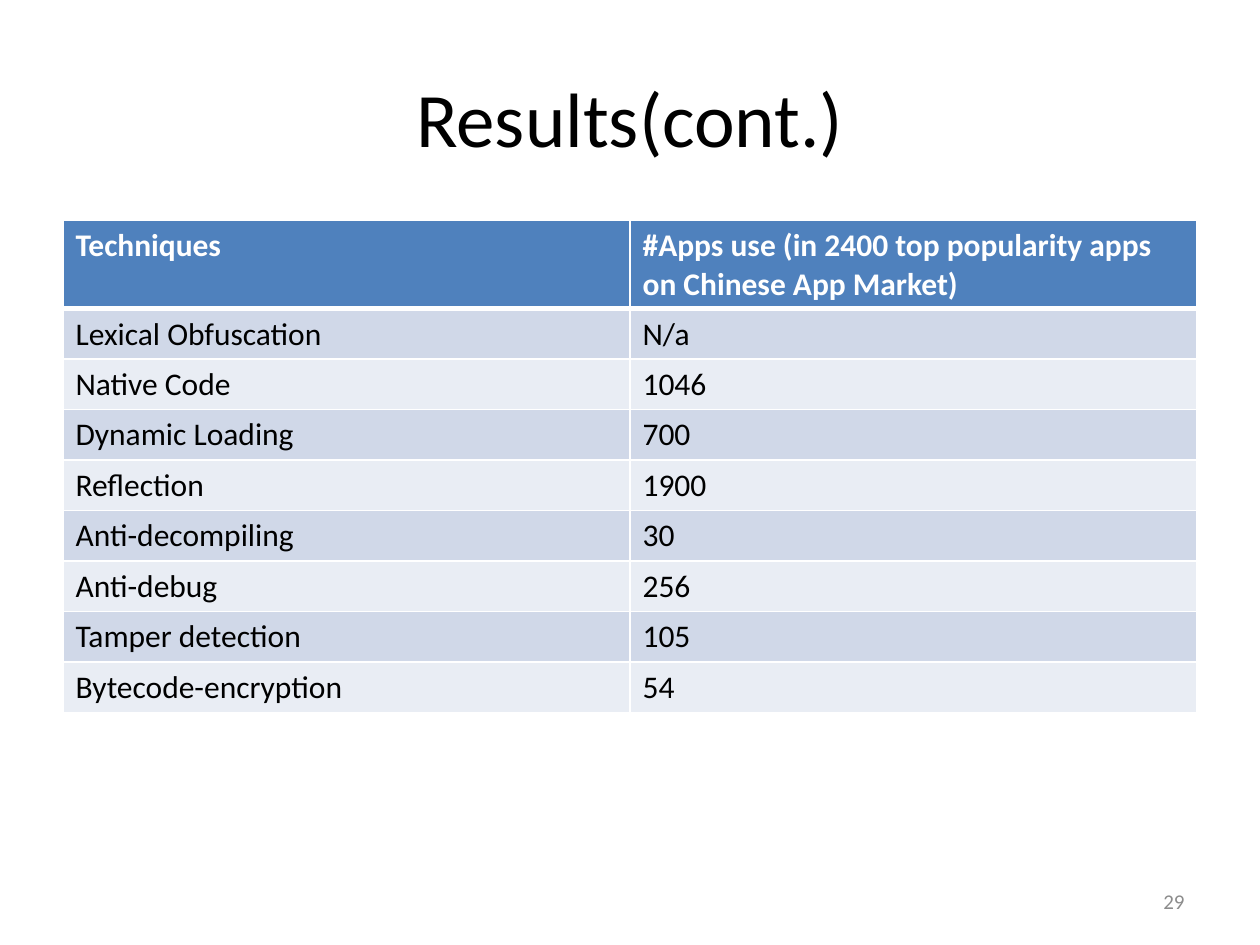
from lxml import etree
from pptx import Presentation
from pptx import util as u
from pptx.dml.color import RGBColor
from pptx.enum import text
from pptx.oxml import ns

FONT = "Calibri"
WHITE, BLACK, GRAY = "FFFFFF", "000000", "8C8C8C"
HEADER_FILL = "4F81BD"
BAND_FILLS = ("D0D8E8", "E9EDF4")

RESULTS = [
    ("Techniques", "#Apps use (in 2400 top popularity apps on Chinese App Market)"),
    ("Lexical Obfuscation", "N/a"),
    ("Native Code", "1046"),
    ("Dynamic Loading", "700"),
    ("Reflection", "1900"),
    ("Anti-decompiling", "30"),
    ("Anti-debug", "256"),
    ("Tamper detection", "105"),
    ("Bytecode-encryption", "54"),
]


def color(value):
    return RGBColor.from_string(value)


def write(frame, words, size=18, fill=BLACK, bold=False, align=text.PP_ALIGN.LEFT):
    para = frame.paragraphs[0]
    para.alignment = align
    span = para.add_run()
    span.text = words
    span.font.name = FONT
    span.font.size = u.Pt(size)
    span.font.bold = bold
    span.font.color.rgb = color(fill)


def add_text(page, words, left, top, width, height, **style):
    box = page.shapes.add_textbox(*map(u.Inches, (left, top, width, height)))
    box.text_frame.word_wrap = True
    box.text_frame.vertical_anchor = text.MSO_ANCHOR.MIDDLE
    write(box.text_frame, words, **style)


def add_borders(cell, **widths):
    properties = cell._tc.get_or_add_tcPr()
    for side in "LRTB":
        line = etree.SubElement(properties, ns.qn(f"a:ln{side}"),
                                w=str(u.Pt(widths.get(side, 1))))
        fill = etree.SubElement(line, ns.qn("a:solidFill"))
        etree.SubElement(fill, ns.qn("a:srgbClr"), val=WHITE)


def add_results_table(page):
    frame = page.shapes.add_table(len(RESULTS), 2, u.Inches(0.5), u.Inches(1.75),
                                  u.Inches(9), u.Inches(3.9))
    table = frame.table
    for column in table.columns:
        column.width = u.Inches(4.5)
    for index, values in enumerate(RESULTS):
        header = index == 0
        table.rows[index].height = u.Inches(0.7 if header else 0.4)
        for cell, value in zip(table.rows[index].cells, values):
            write(cell.text_frame, value, bold=header, fill=WHITE if header else BLACK)
            # A thick rule separates the header from the bands
            add_borders(cell, B=3 if header else 1, T=3 if index == 1 else 1)
            cell.fill.solid()
            cell.fill.fore_color.rgb = color(
                HEADER_FILL if header else BAND_FILLS[(index - 1) % 2])


def main():
    deck = Presentation()
    deck.slide_width, deck.slide_height = u.Inches(10), u.Inches(7.5)
    page = deck.slides.add_slide(deck.slide_layouts[6])

    # Title and page number
    add_text(page, "Results(cont.)", 0.5, 0.3, 9, 1.25, size=44,
             align=text.PP_ALIGN.CENTER)
    add_text(page, "29", 7.17, 6.95, 2.33, 0.4, size=12, fill=GRAY,
             align=text.PP_ALIGN.RIGHT)

    # Technique counts
    add_results_table(page)
    deck.save("out.pptx")


if __name__ == "__main__":
    main()
